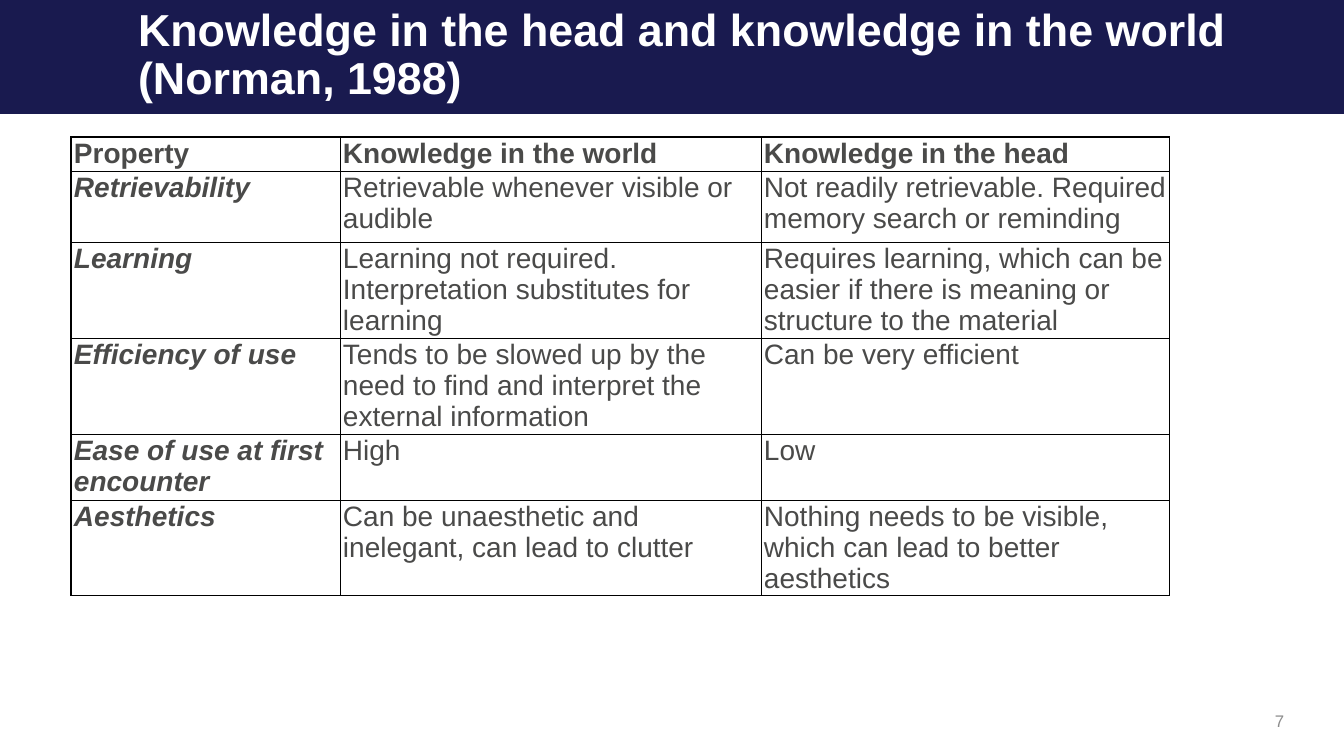
import lxml.etree
import pptx
import pptx.dml.color
import pptx.enum.shapes
import pptx.enum.text
import pptx.oxml.ns
import pptx.util

RGB = pptx.dml.color.RGBColor
NAVY = RGB(0x19, 0x1A, 0x4F)
WHITE = RGB(0xFF, 0xFF, 0xFF)
INK = RGB(0x4A, 0x4A, 0x49)
GRAY = RGB(0x8C, 0x8C, 0x8C)
BLACK = RGB(0, 0, 0)
SCALE = 12192000 / 1344
THIN, THICK = 0.39, 0.87
ALIGN = pptx.enum.text.PP_ALIGN
MIDDLE = pptx.enum.text.MSO_ANCHOR.MIDDLE

TITLE = "Knowledge in the head and knowledge in the world (Norman, 1988)"
COLS = [269, 421, 409]
ROWS = [34, 71, 96, 96, 66, 96]
CELLS = [
    ["Property", "Knowledge in the world", "Knowledge in the head"],
    ["Retrievability", "Retrievable whenever visible or audible",
     "Not readily retrievable. Required memory search or reminding"],
    ["Learning", "Learning not required. Interpretation substitutes for learning",
     "Requires learning, which can be easier if there is meaning or structure to the material"],
    ["Efficiency of use",
     "Tends to be slowed up by the need to find and interpret the external information",
     "Can be very efficient"],
    ["Ease of use at first encounter", "High", "Low"],
    ["Aesthetics", "Can be unaesthetic and inelegant, can lead to clutter",
     "Nothing needs to be visible, which can lead to better aesthetics"],
]


def px(count):
    return pptx.util.Emu(round(count * SCALE))


class Deck:
    font = "Arial"

    def __init__(self):
        self.show = pptx.Presentation()
        self.show.slide_width, self.show.slide_height = px(1344), px(756)
        self.slide = self.show.slides.add_slide(self.show.slide_layouts[5])

    def style(self, frame, size, color, bold=False, slant=False):
        for para in frame.paragraphs:
            for run in para.runs:
                font = run.font
                font.name, font.size = self.font, pptx.util.Pt(size)
                font.bold, font.italic = bold, slant
                font.color.rgb = color

    def band(self, x, y, w, h, color):
        kind = pptx.enum.shapes.MSO_SHAPE.RECTANGLE
        shape = self.slide.shapes.add_shape(kind, px(x), px(y), px(w), px(h))
        shape.shadow.inherit = False
        shape.fill.solid()
        shape.fill.fore_color.rgb = color
        shape.line.fill.background()
        tree = self.slide.shapes.element
        tree.remove(shape.element)
        tree.insert(2, shape.element)

    def title(self, x, y, w, h, text):
        shape = self.slide.shapes.title
        shape.left, shape.top, shape.width, shape.height = px(x), px(y), px(w), px(h)
        frame = shape.text_frame
        frame.text = text
        frame.word_wrap = True
        frame.auto_size = pptx.enum.text.MSO_AUTO_SIZE.NONE
        frame.vertical_anchor = MIDDLE
        para = frame.paragraphs[0]
        para.alignment, para.line_spacing = ALIGN.LEFT, 0.9
        para.space_before = pptx.util.Pt(0)
        self.style(frame, 32, WHITE, bold=True)

    def label(self, x, y, w, h, text, size, color):
        box = self.slide.shapes.add_textbox(px(x), px(y), px(w), px(h))
        frame = box.text_frame
        frame.text = text
        frame.word_wrap = True
        frame.vertical_anchor = MIDDLE
        frame.paragraphs[0].alignment = ALIGN.RIGHT
        self.style(frame, size, color)

    def border(self, cell, side, width):
        name = pptx.oxml.ns.qn
        props = cell._tc.get_or_add_tcPr()
        line = lxml.etree.SubElement(props, name("a:ln" + side), w=str(pptx.util.Pt(width)))
        fill = lxml.etree.SubElement(line, name("a:solidFill"))
        lxml.etree.SubElement(fill, name("a:srgbClr"), val=str(BLACK))

    def table(self, x, y, cols, rows, cells):
        last, end = len(rows) - 1, len(cols) - 1
        frame = self.slide.shapes.add_table(
            len(rows), len(cols), px(x), px(y), px(sum(cols)), px(sum(rows)))
        table = frame.table
        table.first_row = table.horz_banding = False
        for col, width in zip(table.columns, cols):
            col.width = px(width)
        for row, height in zip(table.rows, rows):
            row.height = px(height)
        for r, texts in enumerate(cells):
            for c, text in enumerate(texts):
                cell = table.cell(r, c)
                cell.text_frame.text = text
                cell.margin_left = cell.margin_right = px(3)
                cell.margin_top = cell.margin_bottom = px(1)
                self.style(cell.text_frame, 20, INK, r == 0 or c == 0, r > 0 and c == 0)
                edges = {"L": c == 0, "R": c == end, "T": r == 0, "B": r == last}
                for side, outer in edges.items():
                    self.border(cell, side, THICK if outer else THIN)
                cell.fill.background()


def main():
    deck = Deck()
    deck.band(0, 0, 1344, 114, NAVY)
    deck.title(128, -1, 1166, 114, TITLE)
    deck.table(71, 137, COLS, ROWS, CELLS)
    deck.label(974, 701, 320, 40, "7", 12, GRAY)
    deck.show.save("out.pptx")


if __name__ == "__main__":
    main()
